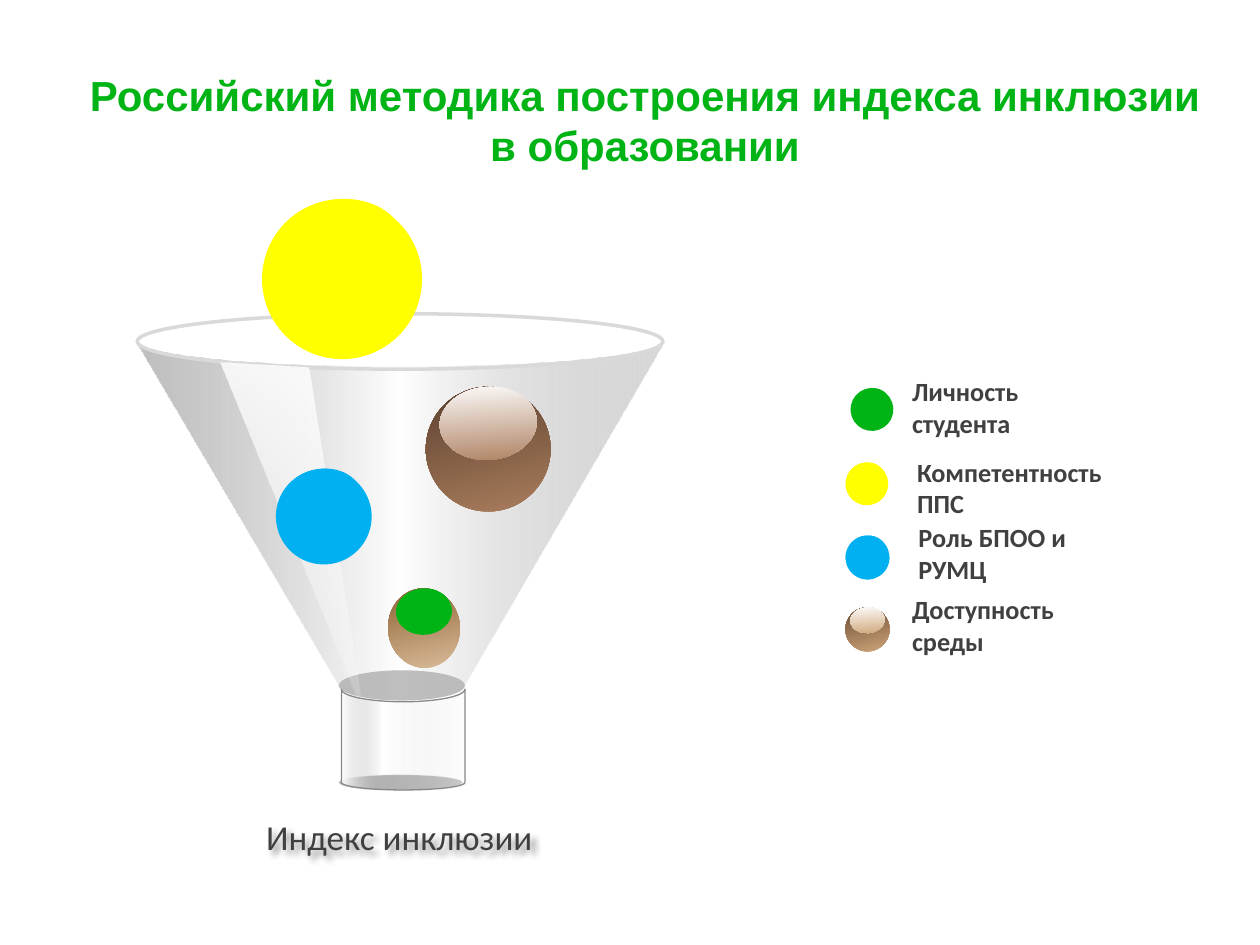
from math import cos, radians, sin

from lxml import etree
from pptx import Presentation
from pptx.dml.color import RGBColor
from pptx.enum.shapes import MSO_SHAPE
from pptx.enum.text import MSO_ANCHOR, MSO_AUTO_SIZE, PP_ALIGN
from pptx.oxml.ns import qn
from pptx.util import Pt

PX = 9144
TITLE_ONLY = 5
OVAL = MSO_SHAPE.OVAL
TOP, MIDDLE = MSO_ANCHOR.TOP, MSO_ANCHOR.MIDDLE
LEFT, CENTER = PP_ALIGN.LEFT, PP_ALIGN.CENTER
FIT_SHAPE = MSO_AUTO_SIZE.SHAPE_TO_FIT_TEXT
GREEN, YELLOW, BLUE = "00B415", "FFFF00", "00B0F0"
WHITE, SILVER, GRAY, TEXT = "FFFFFF", "D9D9D9", "A6A6A6", "404040"
TILT = -4.2


def color(value):
    """Return the colour for a hex string."""
    return RGBColor.from_string(value)


def emu(*lengths):
    """Turn px lengths into EMU."""
    return [round(length * PX) for length in lengths]


def add_alpha(parent, opacity):
    """Give the solid colour inside an element an opacity in percent."""
    element = next(parent.iter(qn("a:srgbClr")))
    etree.SubElement(element, qn("a:alpha"), val=str(opacity * 1000))


def fill_solid(shape, value, opacity=100):
    """Fill a shape with one colour."""
    shape.fill.solid()
    shape.fill.fore_color.rgb = color(value)
    if opacity < 100:
        add_alpha(shape.fill._xPr.find(qn("a:solidFill")), opacity)


def fill_gradient(shape, stops, angle):
    """Fill a shape with (position, colour, opacity) stops at a clockwise angle."""
    shape.fill.gradient()
    gradient = shape.fill._xPr.find(qn("a:gradFill"))
    for child in list(gradient):
        gradient.remove(child)
    stop_list = etree.SubElement(gradient, qn("a:gsLst"))
    for position, value, opacity in stops:
        stop = etree.SubElement(stop_list, qn("a:gs"), pos=str(position * 1000))
        etree.SubElement(stop, qn("a:srgbClr"), val=value)
        add_alpha(stop, opacity)
    etree.SubElement(gradient, qn("a:lin"), ang=str(angle * 60000), scaled="0")


def outline(shape, value=None, width=0.75):
    """Set the outline of a shape, or clear it, and drop the shadow."""
    shape.shadow.inherit = False
    if value is None:
        shape.line.fill.background()
    else:
        shape.line.color.rgb = color(value)
        shape.line.width = Pt(width)


def add_oval(slide, left, top, width, height, rotation=0):
    """Add an ellipse without outline."""
    shape = slide.shapes.add_shape(OVAL, *emu(left, top, width, height))
    shape.rotation = rotation
    outline(shape)
    return shape


def add_outline(slide, points):
    """Add a closed freeform through px points."""
    first, *rest = [emu(*point) for point in points]
    builder = slide.shapes.build_freeform(*first, scale=1.0)
    builder.add_line_segments(rest, close=True)
    shape = builder.convert_to_shape()
    outline(shape)
    return shape


def lower_arc(center_x, center_y, radius_x, radius_y):
    """List points along the lower half of an ellipse from right to left."""
    angles = [radians(degree) for degree in range(0, 181, 5)]
    return [(center_x + radius_x * cos(a), center_y + radius_y * sin(a)) for a in angles]


def add_funnel(slide, left, top):
    """Draw the glass funnel from its top left corner."""
    center = left + 210
    throat = add_oval(slide, left + 161, top + 283, 100, 24)
    fill_solid(throat, "383838", 32)

    body = add_outline(slide, lower_arc(center, top + 21, 210, 21)
                       + lower_arc(center + 1, top + 294, 50, 12)[::-1])
    fill_gradient(body, [(0, SILVER, 100), (50, GRAY, 0), (99, "BFBFBF", 100)], 180)

    base = add_oval(slide, left + 161, top + 366, 98, 12)
    fill_solid(base, "2A2A2A", 35)
    outline(base, SILVER)
    add_alpha(base.line._ln, 24)

    mouth = add_oval(slide, left + 1, top, 417, 44)
    fill_solid(mouth, WHITE, 10)
    outline(mouth, SILVER, 2)

    glare = [(67, 39), (175, 305), (178, 305), (137, 43)]
    glare = add_outline(slide, [(left + x, top + y) for x, y in glare])
    fill_gradient(glare, [(0, WHITE, 84), (100, WHITE, 17)], 90)

    spout = add_outline(slide, lower_arc(center + 2, top + 298, 49, 10)[::-1]
                        + lower_arc(center + 2, top + 372, 49, 6))
    fill_gradient(spout, [(0, WHITE, 100), (33, GRAY, 0), (100, WHITE, 30)], 0)
    outline(spout, "888888")


def add_ball(slide, box, shades, cap):
    """Draw a tilted ball with a cap; shades are one or two colours each."""
    left, top, width, height = box
    cap_box = (left + 0.11 * width, top, 0.78 * width, 0.585 * height)
    for part_box, colors, angle in ((box, shades, 260), (cap_box, cap, 90)):
        part = add_oval(slide, *part_box, TILT)
        if len(colors) == 1:
            fill_solid(part, colors[0])
        else:
            start, end = colors
            fill_gradient(part, [(0, start, 100), (100, end, 100)], angle)


def set_text(shape, text, size, font_name, value, bold=False, align=LEFT, anchor=TOP):
    """Write and format one wrapped paragraph."""
    frame = shape.text_frame
    frame.text = text
    frame.word_wrap = True
    frame.auto_size = FIT_SHAPE
    frame.vertical_anchor = anchor
    paragraph = frame.paragraphs[0]
    paragraph.alignment = align
    font = paragraph.runs[0].font
    font.size, font.name, font.bold = Pt(size), font_name, bold
    font.color.rgb = color(value)


def add_title(slide, box):
    """Place the slide title."""
    title = slide.shapes.title
    title.left, title.top, title.width, title.height = emu(*box)
    set_text(title, "Российский методика построения индекса инклюзии в образовании",
             24, "Arial", GREEN, True, CENTER)


def add_label(slide, left, top, text):
    """Place one legend label."""
    label = slide.shapes.add_textbox(*emu(left, top, 180, 65))
    set_text(label, text, 15, "Calibri", TEXT, True, anchor=MIDDLE)
    label.text_frame.margin_top = emu(10)[0]


def add_caption(slide, box):
    """Place the caption with its soft shadow."""
    caption = slide.shapes.add_textbox(*emu(*box))
    set_text(caption, "Индекс инклюзии", 20, "Calibri", TEXT, align=CENTER)
    effects = etree.SubElement(caption._element.spPr, qn("a:effectLst"))
    shadow = etree.SubElement(effects, qn("a:outerShdw"), blurRad="50800",
                              dist="50800", dir="2700000", algn="tl", rotWithShape="0")
    etree.SubElement(shadow, qn("a:srgbClr"), val="000000")
    add_alpha(shadow, 40)


def main():
    """Build and save the slide."""
    presentation = Presentation()
    presentation.slide_width, presentation.slide_height = emu(1000, 750)
    slide = presentation.slides.add_slide(presentation.slide_layouts[TITLE_ONLY])
    add_title(slide, (58, 50, 908, 91))
    add_funnel(slide, 108, 249)
    balls = [
        ((208, 158, 127, 127), [YELLOW], [YELLOW]),
        ((338, 307, 99, 99), ["AD7F5F", "593F2D"], [WHITE, "AD7F5F"]),
        ((219, 372, 76, 76), [BLUE], [BLUE]),
        ((308, 467, 57, 63), ["DCBE9C", "8B6131"], [GREEN]),
    ]
    for ball in balls:
        add_ball(slide, *ball)
    legend = [
        ("Личность студента", 714, 288, (675, 308, 34, 34), [GREEN], [GREEN]),
        ("Компетентность ППС", 718, 352, (671, 367, 34, 34), [YELLOW], [YELLOW]),
        ("Роль БПОО и РУМЦ", 719, 404, (671, 425, 35, 35), [BLUE], [BLUE]),
        ("Доступность среды", 714, 461, (671, 482, 35, 35),
         ["D0A77A", "684A35"], [WHITE, "D0A77A"]),
    ]
    for text, left, top, *ball in legend:
        add_ball(slide, *ball)
        add_label(slide, left, top, text)
    add_caption(slide, (192, 642, 250, 43))
    presentation.save("out.pptx")


if __name__ == "__main__":
    main()
